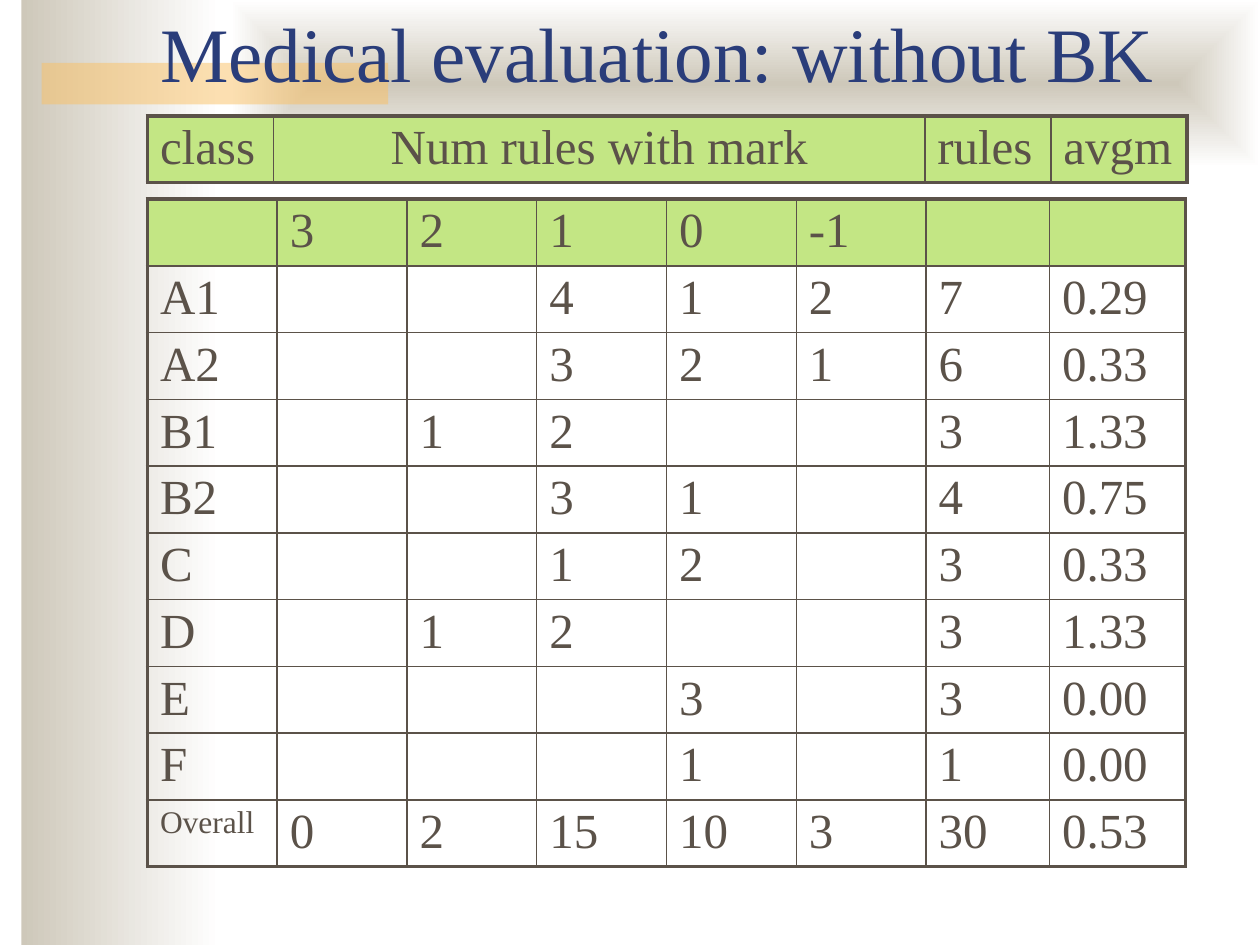
"""Build a slide with a medical rule evaluation table, without background knowledge."""
from dataclasses import dataclass

import lxml.etree
import pptx
import pptx.dml.color
import pptx.enum.shapes
import pptx.enum.text
import pptx.oxml.ns
import pptx.util


@dataclass(frozen=True)
class Theme:
    font: str = "Times New Roman"
    title_color: str = "2A3D7A"
    ink: str = "5B5249"
    header_fill: str = "C3E684"
    sand: str = "CEC8BA"
    white: str = "FFFFFF"
    accent: str = "FAC164"
    accent_alpha: int = 50000
    title_size: float = 44
    body_size: float = 28
    small_size: float = 18
    outer_line: float = 2.25
    inner_line: float = 1


THEME = Theme()
TITLE = "Medical evaluation: without BK"
HEADINGS = [["class", "Num rules with mark", "rules", "avgm"]]
RESULTS = [
    ["", "3", "2", "1", "0", "-1", "", ""],
    ["A1", "", "", "4", "1", "2", "7", "0.29"],
    ["A2", "", "", "3", "2", "1", "6", "0.33"],
    ["B1", "", "1", "2", "", "", "3", "1.33"],
    ["B2", "", "", "3", "1", "", "4", "0.75"],
    ["C", "", "", "1", "2", "", "3", "0.33"],
    ["D", "", "1", "2", "", "", "3", "1.33"],
    ["E", "", "", "", "3", "", "3", "0.00"],
    ["F", "", "", "", "1", "", "1", "0.00"],
    ["Overall", "0", "2", "15", "10", "3", "30", "0.53"],
]
SLIDE_WIDTH, SLIDE_HEIGHT = 10, 7.5
TABLE_LEFT, ROW_HEIGHT, CELL_MARGIN = 1.17, 0.53, 0.04
HEADING_TOP, RESULTS_TOP = 0.92, 1.58
HEADING_COLUMNS = [1, 5.17, 1, 1.08]
RESULT_COLUMNS = [1.03] * 6 + [0.98, 1.08]


def inches(*values):
    return [pptx.util.Inches(value) for value in values]


def rgb(color):
    return pptx.dml.color.RGBColor.from_string(color)


def add_element(parent, tag, **attributes):
    return lxml.etree.SubElement(parent, pptx.oxml.ns.qn(tag), attributes)


def style_paragraph(paragraph, size, color):
    paragraph.font.name = THEME.font
    paragraph.font.size = pptx.util.Pt(size)
    paragraph.font.color.rgb = rgb(color)


def add_panel(slide, *box):
    panel = slide.shapes.add_shape(pptx.enum.shapes.MSO_SHAPE.RECTANGLE, *inches(*box))
    panel.shadow.inherit = False
    panel.line.fill.background()
    return panel


def add_gradient_panel(slide, *box):
    panel = add_panel(slide, *box)
    panel.fill.gradient()
    panel.fill.gradient_angle = 0
    for stop, color in zip(panel.fill.gradient_stops, (THEME.sand, THEME.white)):
        stop.color.rgb = rgb(color)
    return panel


def add_background(slide):
    add_gradient_panel(slide, 0.17, 0, 1.58, SLIDE_HEIGHT)
    banner = add_gradient_panel(slide, 1.83, 0, 8.17, 1.33)
    gradient = banner._element.spPr.find(pptx.oxml.ns.qn("a:gradFill"))
    gradient.remove(gradient.find(pptx.oxml.ns.qn("a:lin")))
    center = add_element(gradient, "a:path", path="shape")
    add_element(center, "a:fillToRect", **dict.fromkeys("ltrb", "50000"))
    accent = add_panel(slide, 0.33, 0.5, 2.75, 0.33)
    accent.fill.solid()
    accent.fill.fore_color.rgb = rgb(THEME.accent)
    color = accent._element.spPr.find(".//" + pptx.oxml.ns.qn("a:srgbClr"))
    add_element(color, "a:alpha", val=str(THEME.accent_alpha))


def add_title(slide):
    title = slide.shapes.title
    slide.shapes._spTree.append(title._element)
    title.left, title.top, title.width, title.height = inches(1.17, -0.42, 8.5, 1.25)
    frame = title.text_frame
    frame.text = TITLE
    frame.word_wrap = True
    frame.auto_size = pptx.enum.text.MSO_AUTO_SIZE.NONE
    frame.vertical_anchor = pptx.enum.text.MSO_ANCHOR.BOTTOM
    frame.paragraphs[0].alignment = pptx.enum.text.PP_ALIGN.LEFT
    style_paragraph(frame.paragraphs[0], THEME.title_size, THEME.title_color)


def set_borders(cell, outer_sides):
    properties = cell._tc.get_or_add_tcPr()
    for index, (side, outer) in enumerate(outer_sides.items()):
        width = pptx.util.Pt(THEME.outer_line if outer else THEME.inner_line)
        line = add_element(properties, f"a:ln{side}", w=str(int(width)))
        fill = add_element(line, "a:solidFill")
        add_element(fill, "a:srgbClr", val=THEME.ink)
        properties.insert(index, line)


def add_grid(slide, rows, top, column_widths):
    box = inches(TABLE_LEFT, top, sum(column_widths), ROW_HEIGHT * len(rows))
    table = slide.shapes.add_table(len(rows), len(column_widths), *box).table
    table.first_row = table.horz_banding = False
    for column, width in zip(table.columns, column_widths):
        column.width = pptx.util.Inches(width)
    last_row, last_column = len(rows) - 1, len(column_widths) - 1
    for row_index, row in enumerate(rows):
        table.rows[row_index].height = pptx.util.Inches(ROW_HEIGHT)
        for column_index, text in enumerate(row):
            cell = table.cell(row_index, column_index)
            cell.text = text
            cell.margin_top = cell.margin_bottom = pptx.util.Inches(CELL_MARGIN)
            size = THEME.small_size if text == "Overall" else THEME.body_size
            style_paragraph(cell.text_frame.paragraphs[0], size, THEME.ink)
            if row_index == 0:
                cell.fill.solid()
                cell.fill.fore_color.rgb = rgb(THEME.header_fill)
            else:
                cell.fill.background()
            set_borders(cell, {
                "L": column_index == 0,
                "R": column_index == last_column,
                "T": row_index == 0,
                "B": row_index == last_row,
            })
    return table


def main():
    presentation = pptx.Presentation()
    presentation.slide_width, presentation.slide_height = inches(SLIDE_WIDTH, SLIDE_HEIGHT)
    slide = presentation.slides.add_slide(presentation.slide_layouts.get_by_name("Title Only"))
    add_background(slide)
    add_title(slide)
    headings = add_grid(slide, HEADINGS, HEADING_TOP, HEADING_COLUMNS)
    headings.cell(0, 1).text_frame.paragraphs[0].alignment = pptx.enum.text.PP_ALIGN.CENTER
    add_grid(slide, RESULTS, RESULTS_TOP, RESULT_COLUMNS)
    presentation.save("out.pptx")


if __name__ == "__main__":
    main()
